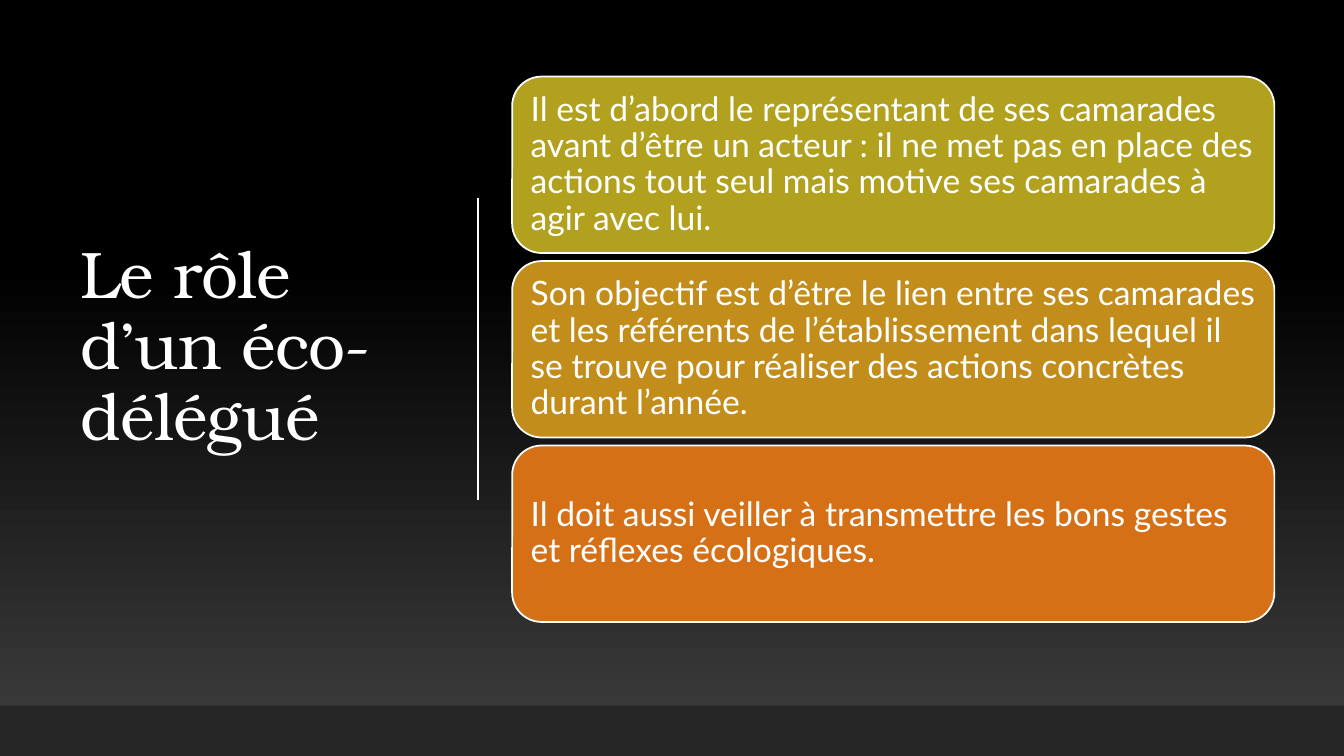
from pptx import Presentation
from pptx.dml.color import RGBColor
from pptx.enum.shapes import MSO_CONNECTOR, MSO_SHAPE
from pptx.enum.text import MSO_ANCHOR, PP_ALIGN
from pptx.oxml.ns import qn
from pptx.util import Inches, Pt
from lxml.etree import SubElement

WHITE = "FFFFFF"
ROLES = [
    ("B1A11F", "Il est d’abord le représentant de ses camarades avant d’être un "
               "acteur : il ne met pas en place des actions tout seul mais motive "
               "ses camarades à agir avec lui."),
    ("C38D1B", "Son objectif est d’être le lien entre ses camarades et les référents "
               "de l’établissement dans lequel il se trouve pour réaliser des actions "
               "concrètes durant l’année."),
    ("D57017", "Il doit aussi veiller à transmettre les bons gestes et réflexes "
               "écologiques."),
]


def rgb(value):
    return RGBColor.from_string(value)


class RoleSlide:
    title_font = "TeX Gyre Bonum"
    body_font = "Lato"

    def __init__(self, prs):
        self.s = prs.slides.add_slide(prs.slide_layouts[6])

    def background(self, bottom, top):
        """Fade upwards from bottom to top, done at 65 % of the height."""
        fill = self.s.background.fill
        fill.gradient()
        fill.gradient_angle = 90
        for stop, color, position in zip(fill.gradient_stops, (bottom, top), (0, 0.65)):
            stop.color.rgb = rgb(color)
            stop.position = position

    def set_text(self, sp, text, font, size):
        tf = sp.text_frame
        tf.word_wrap = True
        tf.vertical_anchor = MSO_ANCHOR.MIDDLE
        tf.margin_left = tf.margin_right = Inches(0.1)
        p = tf.paragraphs[0]
        p.alignment = PP_ALIGN.LEFT
        p.line_spacing = 0.9
        p.font.name = font
        p.font.size = Pt(size)
        p.font.color.rgb = rgb(WHITE)
        r = p.add_run()
        r.text = text
        return r

    def title(self, text, x, y, w, h):
        sp = self.s.shapes.add_textbox(Inches(x), Inches(y), Inches(w), Inches(h))
        r = self.set_text(sp, text, self.title_font, 47)
        r._r.get_or_add_rPr().set("spc", "-50")

    def box(self, kind, color, x, y, w, h):
        sp = self.s.shapes.add_shape(kind, Inches(x), Inches(y), Inches(w), Inches(h))
        sp.shadow.inherit = False
        sp.fill.solid()
        sp.fill.fore_color.rgb = rgb(color)
        sp.line.fill.background()
        return sp

    def card(self, text, color, x, y, w, h):
        sp = self.box(MSO_SHAPE.ROUNDED_RECTANGLE, color, x, y, w, h)
        sp.line.color.rgb = rgb(WHITE)
        sp.line.width = Pt(1.25)
        self.set_text(sp, text, self.body_font, 24)

    def divider(self, x, top, bottom):
        line = self.s.shapes.add_connector(
            MSO_CONNECTOR.STRAIGHT, Inches(x), Inches(top), Inches(x), Inches(bottom))
        line.line.color.rgb = rgb(WHITE)
        line.line.width = Pt(1)
        SubElement(line._element.spPr, qn("a:effectLst"))


def main():
    prs = Presentation()
    prs.slide_width, prs.slide_height = Inches(13.33), Inches(7.5)
    slide = RoleSlide(prs)
    slide.background("3F3F3F", "000000")
    slide.title("Le rôle d’un éco-délégué", 0.7, 0.69, 3.69, 5.53)
    slide.divider(4.74, 1.96, 4.96)
    slide.box(MSO_SHAPE.RECTANGLE, "262626", 0, 7, 13.33, 0.5)
    card_height, gap = 1.75, 0.08
    for i, (color, text) in enumerate(ROLES):
        slide.card(text, color, 5.08, 0.76 + i * (card_height + gap), 7.56, card_height)
    prs.save("out.pptx")


if __name__ == "__main__":
    main()
